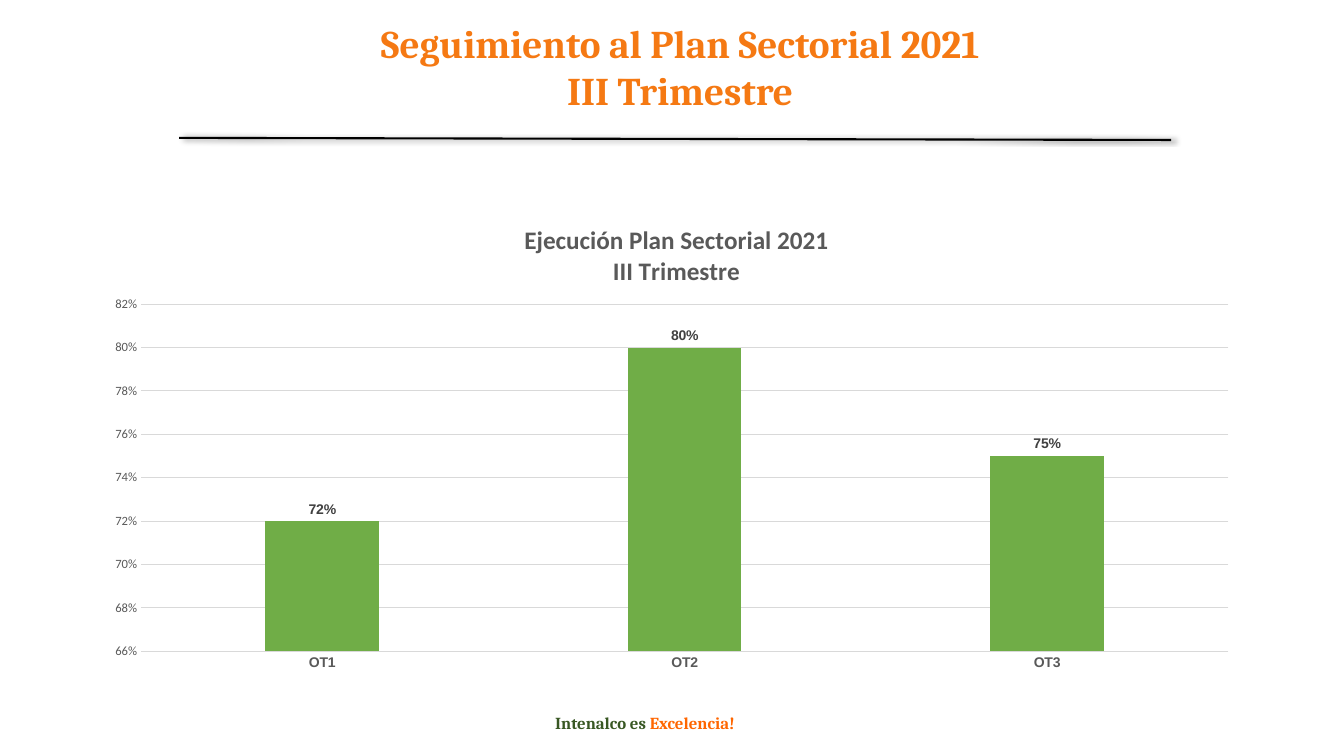
from pptx import Presentation
from pptx.chart.data import CategoryChartData
from pptx.dml.color import RGBColor
from pptx.enum.chart import XL_CHART_TYPE as ChartType, XL_LABEL_POSITION as LabelPos, XL_TICK_MARK as Tick
from pptx.enum.shapes import MSO_CONNECTOR as Connector
from pptx.enum.text import MSO_AUTO_SIZE as AutoSize, PP_ALIGN as Align
from pptx.oxml import parse_xml
from pptx.oxml.ns import nsdecls, qn
from pptx.util import Pt

COLORS = {
    "background": "FFFFFF",
    "heading": "F57913",
    "motto": "385723",
    "accent": "FF6600",
    "rule": "000000",
    "bar": "70AD47",
    "axis": "595959",
    "label": "404040",
    "grid": "D9D9D9",
}


def rgb(name):
    return RGBColor.from_string(COLORS[name])


def style_font(font, size, color, face, bold=False):
    font.size = Pt(size)
    font.name = face
    font.bold = bold
    font.color.rgb = rgb(color)


def style_line(line, color, width):
    line.color.rgb = rgb(color)
    line.width = Pt(width)


def write_text(frame, lines, size, face, bold=True, align=Align.CENTER):
    for index, runs in enumerate(lines):
        paragraph = frame.paragraphs[0] if index == 0 else frame.add_paragraph()
        paragraph.alignment = align
        for text, color in runs:
            run = paragraph.add_run()
            run.text = text
            style_font(run.font, size, color, face, bold)


def add_text(slide, box, lines, **style):
    frame = slide.shapes.add_textbox(*map(Pt, box)).text_frame
    frame.word_wrap = True
    frame.auto_size = AutoSize.SHAPE_TO_FIT_TEXT
    write_text(frame, lines, **style)


def add_heading(slide, box):
    left, top, width, height = box
    add_text(slide, (left, top, width, 75), [
        [("Seguimiento al Plan Sectorial 2021", "heading")],
        [("III Trimestre", "heading")],
    ], size=28, face="Cambria")
    rule_left, rule_top = left - 11, top + height
    rule = slide.shapes.add_connector(
        Connector.STRAIGHT, Pt(rule_left), Pt(rule_top),
        Pt(rule_left + 708.5), Pt(rule_top + 1.5))
    style_line(rule.line, "rule", 1.5)
    rule._element.spPr.append(parse_xml(
        f'<a:effectLst {nsdecls("a")}><a:outerShdw blurRad="{Pt(4)}" dist="{Pt(3)}" '
        f'dir="0" algn="l" rotWithShape="0"><a:srgbClr val="{COLORS["rule"]}">'
        '<a:alpha val="40000"/></a:srgbClr></a:outerShdw></a:effectLst>'))


def place_part(part, position, after=None, inner=False):
    for layout in part.findall(qn("c:layout")):
        part.remove(layout)
    target = '<c:layoutTarget val="inner"/>' if inner else ""
    modes = '<c:xMode val="edge"/><c:yMode val="edge"/>'
    values = "".join(f'<c:{key} val="{value}"/>' for key, value in position.items())
    layout = parse_xml(
        f'<c:layout {nsdecls("c")}><c:manualLayout>{target}{modes}{values}'
        '</c:manualLayout></c:layout>')
    if after is None:
        part.insert(0, layout)
    else:
        part.find(qn(after)).addnext(layout)


def style_axes(chart):
    for axis in (chart.category_axis, chart.value_axis):
        axis.major_tick_mark = axis.minor_tick_mark = Tick.NONE
    categories, values = chart.category_axis, chart.value_axis
    style_font(categories.tick_labels.font, 10, "axis", "Arial", bold=True)
    style_line(categories.format.line, "grid", 0.75)
    style_font(values.tick_labels.font, 9, "axis", "Calibri")
    values.tick_labels.number_format = "0%"
    values.tick_labels.number_format_is_linked = False
    values.format.line.fill.background()
    values.minimum_scale, values.maximum_scale, values.major_unit = 0.66, 0.82, 0.02
    style_line(values.major_gridlines.format.line, "grid", 0.75)


def add_execution_chart(slide, box):
    data = CategoryChartData(number_format="0%")
    data.categories = ["OT1", "OT2", "OT3"]
    data.add_series("Series 1", [0.72, 0.8, 0.75])
    chart = slide.shapes.add_chart(
        ChartType.COLUMN_CLUSTERED, *map(Pt, box), data).chart
    style_font(chart.font, 10, "rule", "Calibri")
    chart.has_legend = False

    chart.has_title = True
    write_text(chart.chart_title.text_frame, [
        [("Ejecución Plan Sectorial 2021", "axis")],
        [("III Trimestre", "axis")],
    ], size=18, face="Calibri")
    place_part(chart.chart_title._element, {"x": 0.37, "y": 0.04}, after="c:tx")
    place_part(chart._chartSpace.chart.plotArea,
               {"x": 0.042, "y": 0.214, "w": 0.938, "h": 0.724}, inner=True)
    style_axes(chart)

    plot = chart.plots[0]
    plot.gap_width, plot.overlap, plot.vary_by_categories = 219, -27, False
    execution = plot.series[0]
    execution.format.fill.solid()
    execution.format.fill.fore_color.rgb = rgb("bar")
    labels = execution.data_labels
    labels.show_value = True
    labels.position = LabelPos.OUTSIDE_END
    labels.number_format = "0%"
    labels.number_format_is_linked = False
    style_font(labels.font, 10, "label", "Arial", bold=True)


def add_motto(slide, box):
    add_text(slide, box, [[("Intenalco es ", "motto"), ("Excelencia!", "accent")]],
             size=12, face="Cambria")


def main():
    deck = Presentation()
    deck.slide_width, deck.slide_height = Pt(960), Pt(540)
    slide = deck.slides.add_slide(deck.slide_layouts[6])
    slide.background.fill.solid()
    slide.background.fill.fore_color.rgb = rgb("background")
    add_motto(slide, (345.5, 505.5, 230.5, 21.5))
    add_heading(slide, (139, 10, 693.5, 88.5))
    add_execution_chart(slide, (66, 144, 828, 342.5))
    deck.save("out.pptx")


if __name__ == "__main__":
    main()
